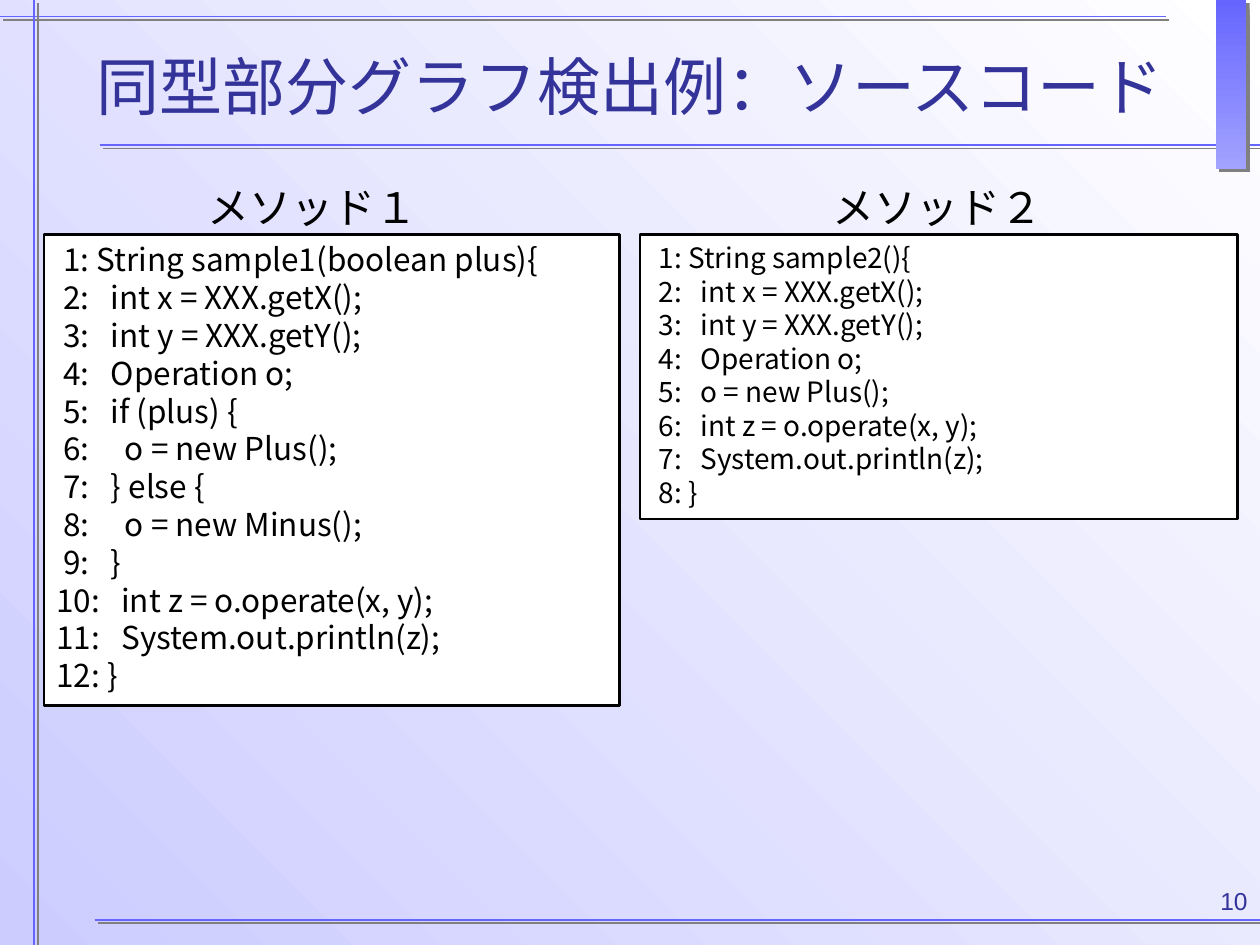
from lxml.etree import SubElement
from pptx import Presentation
from pptx.dml.color import RGBColor
from pptx.enum.shapes import MSO_CONNECTOR as Connector, MSO_SHAPE as Shape
from pptx.enum.text import MSO_ANCHOR as Anchor, PP_ALIGN as Align
from pptx.oxml.ns import qn
from pptx.util import Pt

WIDTH, HEIGHT = 720, 540
BLACK = RGBColor(0, 0, 0)
WHITE = RGBColor(0xFF, 0xFF, 0xFF)
LAVENDER = RGBColor(0xCC, 0xCC, 0xFF)
BLUE = RGBColor(0x66, 0x66, 0xFF)
LIGHT_BLUE = RGBColor(0xA2, 0xA2, 0xFF)
NAVY = RGBColor(0x33, 0x33, 0x99)
GRAY = RGBColor(0x80, 0x80, 0x80)
CODE_FONT = "Noto Sans CJK JP"

# Ends of the decorative rules: x1, y1, x2, y2
RULES = [
    (0, 9.4, 666, 9.4),
    (57, 82.8, 723, 82.8),
    (54, 525.6, WIDTH, 525.6),
    (19.6, 0, 19.6, HEIGHT),
]

METHOD_1 = [
    "String sample1(boolean plus){",
    "  int x = XXX.getX();",
    "  int y = XXX.getY();",
    "  Operation o;",
    "  if (plus) {",
    "    o = new Plus();",
    "  } else {",
    "    o = new Minus();",
    "  }",
    "  int z = o.operate(x, y);",
    "  System.out.println(z);",
    "}",
]
METHOD_2 = [
    "String sample2(){",
    "  int x = XXX.getX();",
    "  int y = XXX.getY();",
    "  Operation o;",
    "  o = new Plus();",
    "  int z = o.operate(x, y);",
    "  System.out.println(z);",
    "}",
]


def set_gradient(fill, start, end, angle):
    fill.gradient()
    fill.gradient_angle = angle
    for stop, color in zip(fill.gradient_stops, (start, end)):
        stop.color.rgb = color


def add_shadow(shape):
    """Hard gray shadow, 2.8 pt towards the lower right."""
    effects = SubElement(shape.element.spPr, qn("a:effectLst"))
    shadow = SubElement(effects, qn("a:outerShdw"), dist=str(Pt(2.8)),
                        dir="2700000", algn="ctr", rotWithShape="0")
    SubElement(shadow, qn("a:srgbClr"), val=str(GRAY))


def add_rule(slide, ends):
    rule = slide.shapes.add_connector(Connector.STRAIGHT, *map(Pt, ends))
    rule.line.color.rgb = BLUE
    rule.line.width = Pt(1)
    add_shadow(rule)


def add_bar(slide, box):
    bar = slide.shapes.add_shape(Shape.RECTANGLE, *map(Pt, box))
    set_gradient(bar.fill, BLUE, LIGHT_BLUE, 270)
    bar.line.fill.background()
    add_shadow(bar)


def set_font(paragraph, name, size, color):
    font = paragraph.font
    font.size = Pt(size)
    font.color.rgb = color
    font.name = name
    # Japanese glyphs take the East Asian typeface
    SubElement(paragraph._p.pPr.find(qn("a:defRPr")), qn("a:ea"),
               typeface=CODE_FONT)


def add_label(slide, box, text, name, size, color, align=Align.CENTER,
              anchor=Anchor.TOP):
    frame = slide.shapes.add_textbox(*map(Pt, box)).text_frame
    frame.word_wrap = True
    frame.vertical_anchor = anchor
    paragraph = frame.paragraphs[0]
    paragraph.text = text
    paragraph.alignment = align
    set_font(paragraph, name, size, color)


def add_code(slide, box, lines, size):
    shape = slide.shapes.add_shape(Shape.RECTANGLE, *map(Pt, box))
    shape.shadow.inherit = False
    shape.fill.solid()
    shape.fill.fore_color.rgb = WHITE
    shape.line.color.rgb = BLACK
    shape.line.width = Pt(1.5)
    frame = shape.text_frame
    frame.word_wrap = True
    frame.vertical_anchor = Anchor.TOP
    frame.text = "\n".join(
        f"{number:>2}: {line}" for number, line in enumerate(lines, 1))
    for paragraph in frame.paragraphs:
        paragraph.alignment = Align.LEFT
        paragraph.line_spacing = Pt(1.2 * size)
        set_font(paragraph, CODE_FONT, size, BLACK)


def main():
    presentation = Presentation()
    presentation.slide_width = Pt(WIDTH)
    presentation.slide_height = Pt(HEIGHT)
    slide = presentation.slides.add_slide(presentation.slide_layouts[6])

    # Background and decoration
    set_gradient(slide.background.fill, LAVENDER, WHITE, 45)
    for ends in RULES[:2]:
        add_rule(slide, ends)
    add_bar(slide, (694.8, 0, 17.3, 96.5))
    for ends in RULES[2:]:
        add_rule(slide, ends)

    # Title
    add_label(slide, (36, 3.6, 648, 90), "同型部分グラフ検出例：ソースコード",
              "Arial", 36, NAVY, anchor=Anchor.MIDDLE)

    # The two methods with their headings
    add_code(slide, (365.8, 133.9, 341.3, 162.7), METHOD_2, 16)
    for left, heading in ((8.6, "メソッド１"), (365.8, "メソッド２")):
        add_label(slide, (left, 100, 340, 36), heading,
                  "Times New Roman", 24, BLACK)
    add_code(slide, (25.2, 133.9, 329, 269.3), METHOD_1, 18)

    # Slide number
    add_label(slide, (552.2, 502.6, 167.8, 37.4), "10", "Arial", 14, NAVY,
              align=Align.RIGHT)

    presentation.save("out.pptx")


if __name__ == "__main__":
    main()
